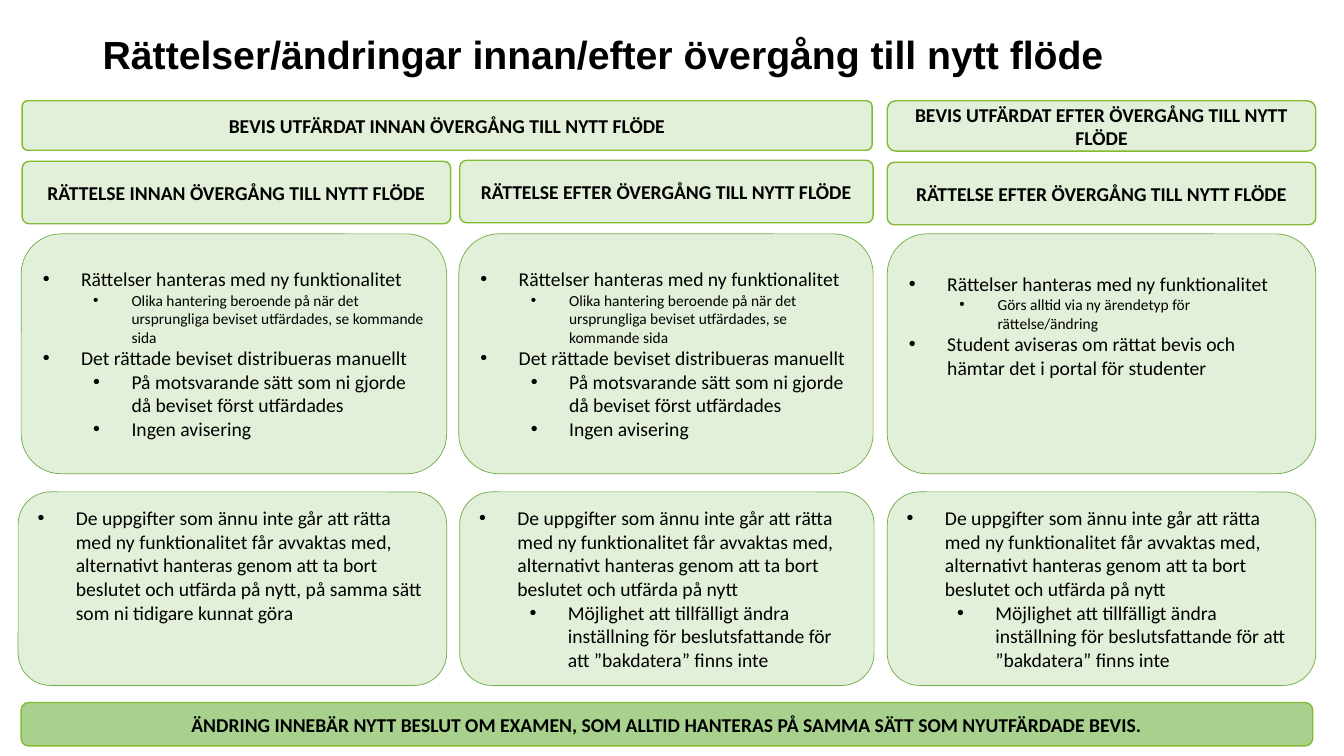
import pptx
import pptx.dml.color
import pptx.enum.shapes
import pptx.enum.text
import pptx.oxml
import pptx.oxml.ns
import pptx.util

Inches = pptx.util.Inches
Pt = pptx.util.Pt
ANCHOR = pptx.enum.text.MSO_ANCHOR
ALIGN = pptx.enum.text.PP_ALIGN


def rgb(value):
    return pptx.dml.color.RGBColor.from_string(value)


class FlowSlide:
    """Style and current slide."""
    PALE, STRONG = "E2F0D9", "A9D18E"
    HEADER_LINE, PANEL_LINE = "83BA32", "70AD47"
    TEXT, FONT, TITLE_FONT = "000000", "Calibri", "Arial"

    def __init__(self, slide):
        self.slide = slide

    def style(self, p, size, bold=False, font=FONT):
        for r in p.runs:
            r.font.size = Pt(size)
            r.font.bold = bold
            r.font.name = font
            r.font.color.rgb = rgb(self.TEXT)

    def title(self, text, x, y, w, h):
        tf = self.slide.shapes.add_textbox(
            Inches(x), Inches(y), Inches(w), Inches(h)).text_frame
        tf.word_wrap = True
        tf.vertical_anchor = ANCHOR.MIDDLE
        tf.text = text
        p = tf.paragraphs[0]
        p.line_spacing = 0.9
        self.style(p, 28, True, self.TITLE_FONT)

    def box(self, x, y, w, h, fill, line, line_width):
        sp = self.slide.shapes.add_shape(
            pptx.enum.shapes.MSO_SHAPE.ROUNDED_RECTANGLE,
            Inches(x), Inches(y), Inches(w), Inches(h))
        sp.shadow.inherit = False
        sp.fill.solid()
        sp.fill.fore_color.rgb = rgb(fill)
        sp.line.color.rgb = rgb(line)
        sp.line.width = Pt(line_width)
        sp.text_frame.word_wrap = True
        sp.text_frame.vertical_anchor = ANCHOR.MIDDLE
        return sp

    def header(self, text, x, y, w, h, fill=PALE, corner=0.11):
        sp = self.box(x, y, w, h, fill, self.HEADER_LINE, 1)
        sp.adjustments[0] = corner
        tf = sp.text_frame
        tf.text = text
        tf.paragraphs[0].alignment = ALIGN.CENTER
        self.style(tf.paragraphs[0], 14, True)

    def panel(self, items, x, y, w, h, top_inset=None):
        """Draw bulleted (level, size, text) items, top-aligned if top_inset is given."""
        tf = self.box(x, y, w, h, self.PALE, self.PANEL_LINE, 0.5).text_frame
        if top_inset is not None:
            tf.vertical_anchor = ANCHOR.TOP
            tf.margin_top = Inches(top_inset)
        for i, (level, size, text) in enumerate(items):
            p = tf.add_paragraph() if i else tf.paragraphs[0]
            p.text = text
            p.level = level
            p.alignment = ALIGN.LEFT
            self.bullet(p, 0.38 + 0.5 * level)
            self.style(p, size)

    def bullet(self, p, indent):
        pPr = p._p.get_or_add_pPr()
        pPr.set("marL", str(Inches(indent)))
        pPr.set("indent", str(-Inches(0.38)))
        ns = pptx.oxml.ns.nsdecls("a")
        for xml in (f'<a:buFont {ns} typeface="Arial"/>', f'<a:buChar {ns} char="•"/>'):
            pPr.append(pptx.oxml.parse_xml(xml))


def main():
    prs = pptx.Presentation()
    prs.slide_width, prs.slide_height = Inches(13.33), Inches(7.5)
    s = FlowSlide(prs.slides.add_slide(prs.slide_layouts[6]))

    s.title("Rättelser/ändringar innan/efter övergång till nytt flöde", 0.92, 0.26, 11.5, 0.6)

    s.header("BEVIS UTFÄRDAT INNAN ÖVERGÅNG TILL NYTT FLÖDE", 0.22, 1, 8.43, 0.49)
    s.header("BEVIS UTFÄRDAT EFTER ÖVERGÅNG TILL NYTT FLÖDE", 8.8, 1, 4.25, 0.5, corner=0.17)
    correction_after = "RÄTTELSE EFTER ÖVERGÅNG TILL NYTT FLÖDE"
    s.header("RÄTTELSE INNAN ÖVERGÅNG TILL NYTT FLÖDE", 0.22, 1.6, 4.25, 0.62)
    s.header(correction_after, 4.56, 1.59, 4.1, 0.62)
    s.header(correction_after, 8.8, 1.61, 4.25, 0.62)

    new_function = (0, 14, "Rättelser hanteras med ny funktionalitet")
    manual = [
        new_function,
        (1, 11, "Olika hantering beroende på när det ursprungliga beviset utfärdades, "
                "se kommande sida"),
        (0, 14, "Det rättade beviset distribueras manuellt"),
        (1, 14, "På motsvarande sätt som ni gjorde då beviset först utfärdades"),
        (1, 14, "Ingen avisering"),
    ]
    digital = [
        new_function,
        (1, 11, "Görs alltid via ny ärendetyp för rättelse/ändring"),
        (0, 14, "Student aviseras om rättat bevis och hämtar det i portal för studenter"),
    ]
    s.panel(manual, 0.21, 2.32, 4.22, 2.38)
    s.panel(manual, 4.55, 2.32, 4.11, 2.38)
    s.panel(digital, 8.8, 2.32, 4.25, 2.38, top_inset=0.26)

    waiting = ("De uppgifter som ännu inte går att rätta med ny funktionalitet får avvaktas med, "
               "alternativt hanteras genom att ta bort beslutet och utfärda på nytt")
    no_backdating = [
        (0, 14, waiting),
        (1, 14, "Möjlighet att tillfälligt ändra inställning för beslutsfattande för "
                "att ”bakdatera” finns inte"),
    ]
    as_before = [(0, 14, waiting + ", på samma sätt som ni tidigare kunnat göra")]
    s.panel(as_before, 0.18, 4.88, 4.25, 1.92, top_inset=0.05)
    s.panel(no_backdating, 4.56, 4.88, 4.11, 1.92)
    s.panel(no_backdating, 8.8, 4.88, 4.25, 1.92)

    s.header("ÄNDRING INNEBÄR NYTT BESLUT OM EXAMEN, SOM ALLTID HANTERAS PÅ SAMMA SÄTT "
             "SOM NYUTFÄRDADE BEVIS.", 0.21, 6.97, 12.81, 0.43, s.STRONG, 0.17)

    prs.save("out.pptx")


if __name__ == "__main__":
    main()
